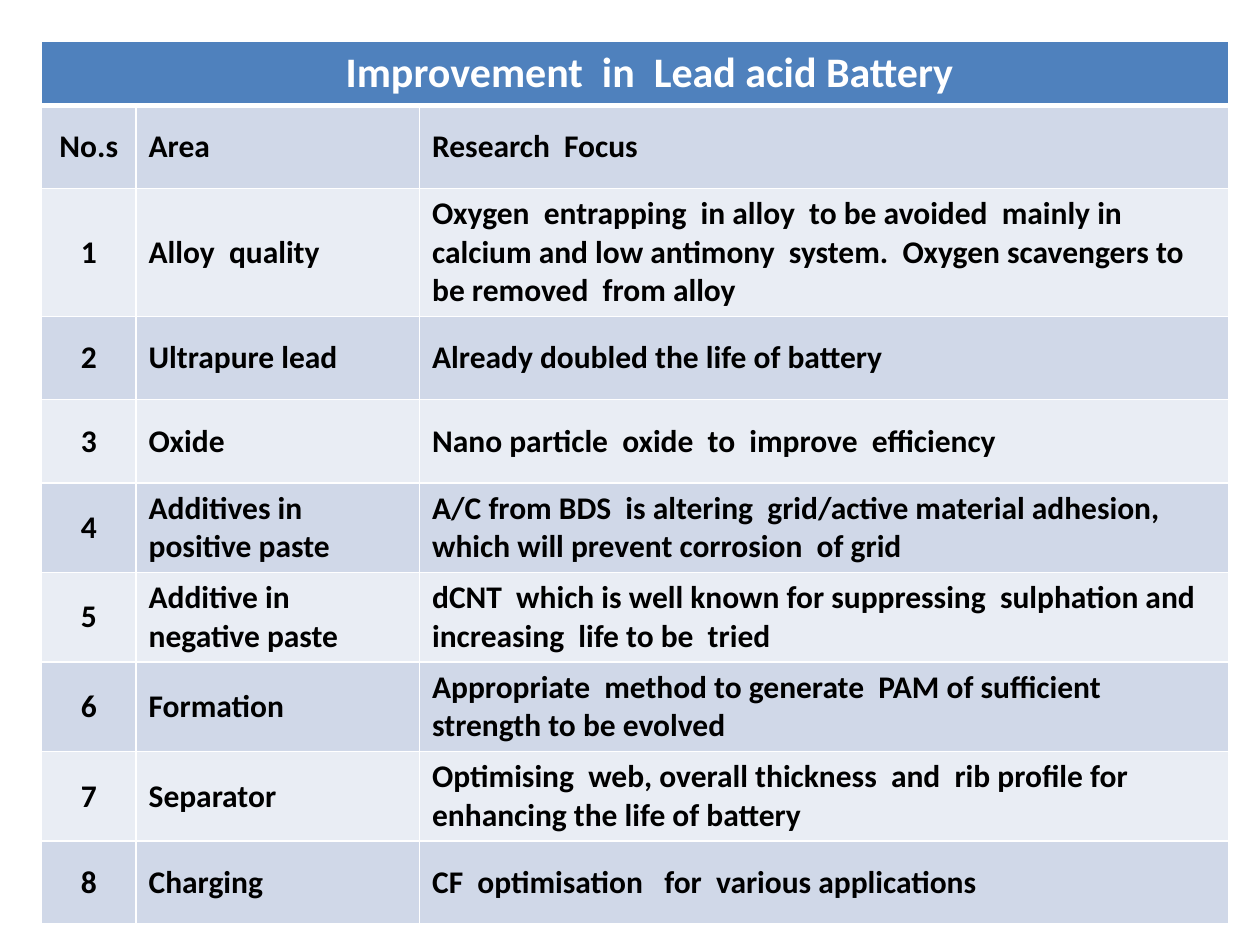
from lxml.etree import SubElement
from pptx import Presentation
from pptx.dml.color import RGBColor as RGB
from pptx.enum.text import MSO_ANCHOR as ANCHOR, PP_ALIGN as ALIGN
from pptx.oxml.ns import qn
from pptx.util import Inches, Pt

COLORS = {
    "title": "4F81BD",
    "odd": "D0D8E8",
    "even": "E9EDF4",
    "light": "FFFFFF",
    "text": "000000",
}
TITLE = "Improvement  in  Lead acid Battery"
HEADINGS = ("No.s", "Area", "Research  Focus")
IMPROVEMENTS = [
    ("Alloy  quality",
     "Oxygen  entrapping  in alloy  to be avoided  mainly in calcium and low antimony  system.  "
     "Oxygen scavengers to be removed  from alloy"),
    ("Ultrapure lead", "Already doubled the life of battery"),
    ("Oxide", "Nano particle  oxide  to  improve  efficiency"),
    ("Additives in positive paste",
     "A/C from BDS  is altering  grid/active material adhesion, which will prevent corrosion  of grid"),
    ("Additive in negative paste",
     "dCNT  which is well known for suppressing  sulphation and increasing  life to be  tried"),
    ("Formation", "Appropriate  method to generate  PAM of sufficient strength to be evolved"),
    ("Separator",
     "Optimising  web, overall thickness  and  rib profile for enhancing the life of battery"),
    ("Charging", "CF  optimisation   for  various applications"),
]
COLUMN_WIDTHS = (0.75, 2.25, 6.42)
TITLE_HEIGHT, ROW_HEIGHT = 0.44, 0.66
TITLE_INDENT = 0.33
TABLE_BOX = (0.33, 0.33, sum(COLUMN_WIDTHS), 6.96)
TITLE_FONT = {"name": "Calibri", "size": Pt(24), "bold": True}
BODY_FONT = {"name": "Calibri", "size": Pt(18), "bold": True}


def add_borders(cell, bottom):
    properties = cell._tc.get_or_add_tcPr()
    widths = {"a:lnL": 1, "a:lnR": 1, "a:lnT": 1, "a:lnB": bottom}
    for position, (side, width) in enumerate(widths.items()):
        line = SubElement(properties, qn(side), w=str(Pt(width)))
        properties.insert(position, line)
        color = SubElement(SubElement(line, qn("a:solidFill")), qn("a:srgbClr"))
        color.set("val", COLORS["light"])


def fill_cell(cell, text, fill, color, font_format, align, bottom=1):
    cell.fill.solid()
    cell.fill.fore_color.rgb = RGB.from_string(COLORS[fill])
    cell.vertical_anchor = ANCHOR.MIDDLE
    add_borders(cell, bottom)
    paragraph = cell.text_frame.paragraphs[0]
    paragraph.alignment = align
    run = paragraph.add_run()
    run.text = text
    run.font.color.rgb = RGB.from_string(COLORS[color])
    for attribute, value in font_format.items():
        setattr(run.font, attribute, value)


def add_improvement_table(slide, box):
    entries = [HEADINGS] + [
        (str(number), *improvement) for number, improvement in enumerate(IMPROVEMENTS, 1)
    ]
    frame = slide.shapes.add_table(
        len(entries) + 1, len(HEADINGS), *(Inches(length) for length in box))
    table = frame.table
    for column, width in zip(table.columns, COLUMN_WIDTHS):
        column.width = Inches(width)
    for index, row in enumerate(table.rows):
        row.height = Inches(ROW_HEIGHT if index else TITLE_HEIGHT)
    frame.height = Inches(box[3])

    title = table.cell(0, 0)
    title.merge(table.cell(0, len(HEADINGS) - 1))
    title.margin_left = Inches(TITLE_INDENT)
    fill_cell(title, TITLE, "title", "light", TITLE_FONT, ALIGN.CENTER, bottom=3)

    for row, entry in enumerate(entries, 1):
        band = "odd" if row % 2 else "even"
        for column, text in enumerate(entry):
            align = ALIGN.LEFT if column else ALIGN.CENTER
            fill_cell(table.cell(row, column), text, band, "text", BODY_FONT, align)


def main():
    deck = Presentation()
    deck.slide_width, deck.slide_height = Inches(10), Inches(7.5)
    slide = deck.slides.add_slide(deck.slide_layouts[6])
    add_improvement_table(slide, TABLE_BOX)
    deck.save("out.pptx")


if __name__ == "__main__":
    main()
